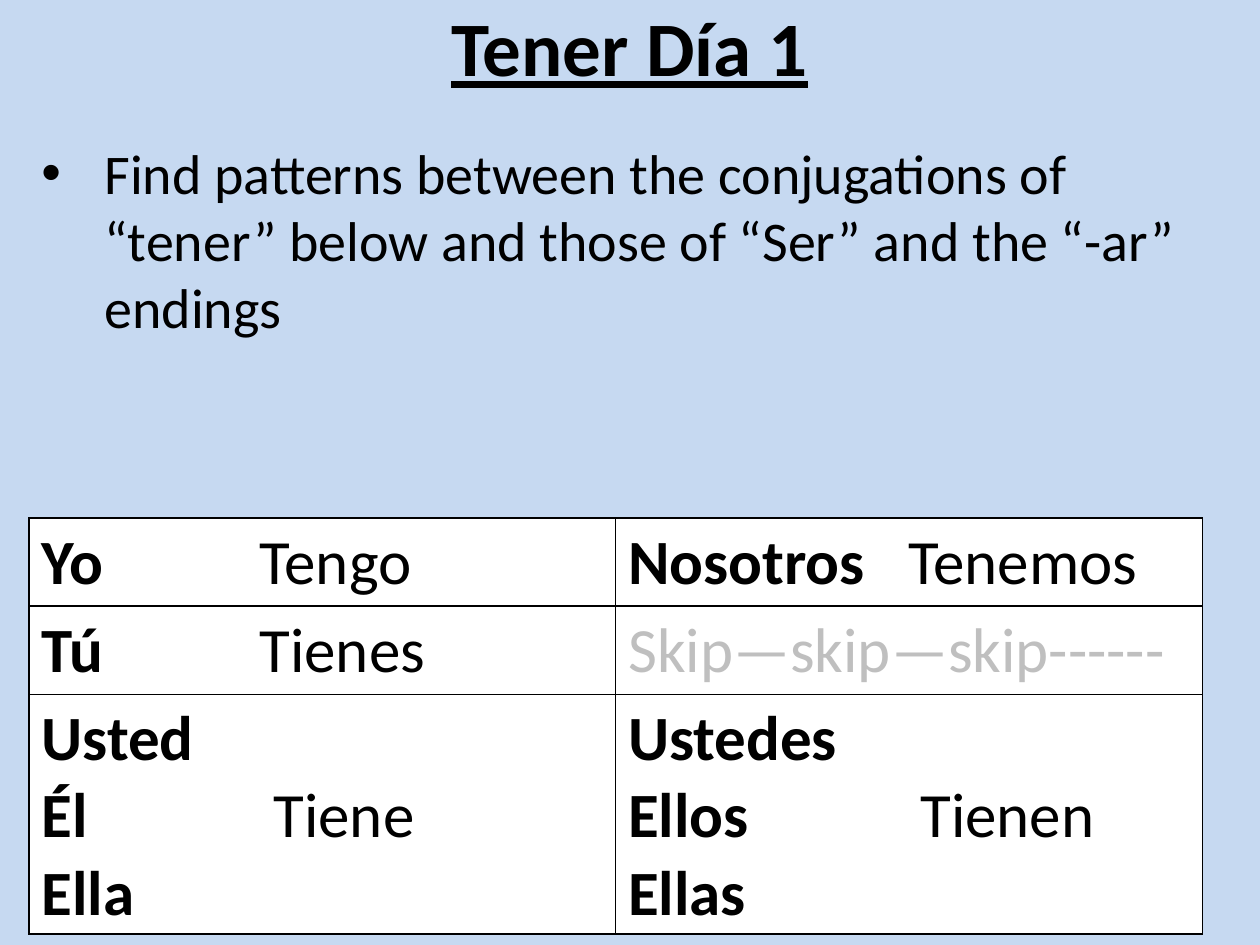
from lxml import etree
from pptx import Presentation
from pptx import util as u
from pptx.dml import color
from pptx.enum import text
from pptx.oxml import ns

FONT = "Calibri"
BLACK, WHITE, GRAY, SKY = "000000", "FFFFFF", "BFBFBF", "C6D9F1"
COLUMN_WIDTH = 335.2
ROW_HEIGHTS = [50.4, 50.4, 136.8]
CONJUGATIONS = [
    [([("Yo", "Tengo")], 124.5), ([("Nosotros", "Tenemos")], 160)],
    [([("Tú", "Tienes")], 124.5), ([("", "Skip—skip—skip------")], 0)],
    [([("Usted", ""), ("Él", "Tiene"), ("Ella", "")], 132.5),
     ([("Ustedes", ""), ("Ellos", "Tienen"), ("Ellas", "")], 167)],
]


def rgb(value):
    return color.RGBColor.from_string(value)


def style(span, size, bold=False, ink=BLACK):
    span.font.name = FONT
    span.font.size = u.Pt(size)
    span.font.bold = bold
    span.font.color.rgb = rgb(ink)


def add_child(parent, tag, **attributes):
    return etree.SubElement(parent, ns.qn(tag), **attributes)


def add_text(page, left, top, width, height, words, size, bold=False):
    box = page.shapes.add_textbox(u.Pt(left), u.Pt(top), u.Pt(width), u.Pt(height))
    box.text_frame.word_wrap = True
    para = box.text_frame.paragraphs[0]
    para.text = words
    style(para.runs[0], size, bold)
    return box


def add_title(page):
    box = add_text(page, 0, -22.3, 720, 97.2, "Tener Día 1", 44, True)
    box.text_frame.vertical_anchor = text.MSO_ANCHOR.MIDDLE
    para = box.text_frame.paragraphs[0]
    para.alignment = text.PP_ALIGN.CENTER
    para.runs[0].font.underline = True


def add_instruction(page):
    words = ("Find patterns between the conjugations of “tener” below "
             "and those of “Ser” and the “-ar” endings")
    box = add_text(page, 16.6, 75.6, 670.4, 123.8, words, 32)
    settings = box.text_frame.paragraphs[0]._p.get_or_add_pPr()
    settings.set("marL", str(u.Pt(36)))
    settings.set("indent", str(u.Pt(-36)))
    add_child(settings, "a:buFont", typeface="Arial")
    add_child(settings, "a:buChar", char="•")


def add_borders(cell):
    settings = cell._tc.get_or_add_tcPr()
    for side in ("a:lnL", "a:lnR", "a:lnT", "a:lnB"):
        line = add_child(settings, side, w=str(u.Pt(1)))
        add_child(add_child(line, "a:solidFill"), "a:srgbClr", val=BLACK)


def write_line(para, pronoun, verb, tab):
    para.text = pronoun
    for span in para.runs:
        style(span, 36, True)
    if verb:
        span = para.add_run()
        span.text = "\t" + verb if pronoun else verb
        style(span, 36, ink=BLACK if pronoun else GRAY)
    if pronoun and verb:
        stops = add_child(para._p.get_or_add_pPr(), "a:tabLst")
        add_child(stops, "a:tab", pos=str(u.Pt(tab)), algn="l")


def fill_cell(cell, lines, tab):
    frame = cell.text_frame
    for index, (pronoun, verb) in enumerate(lines):
        para = frame.add_paragraph() if index else frame.paragraphs[0]
        write_line(para, pronoun, verb, tab)
    add_borders(cell)
    cell.fill.solid()
    cell.fill.fore_color.rgb = rgb(WHITE)


def add_conjugation_table(page):
    frame = page.shapes.add_table(
        len(ROW_HEIGHTS), 2, u.Pt(16.6), u.Pt(296),
        u.Pt(2 * COLUMN_WIDTH), u.Pt(sum(ROW_HEIGHTS)))
    table = frame.table
    table.first_row = table.horz_banding = False
    for column in table.columns:
        column.width = u.Pt(COLUMN_WIDTH)
    for row, height, contents in zip(table.rows, ROW_HEIGHTS, CONJUGATIONS):
        row.height = u.Pt(height)
        for cell, (lines, tab) in zip(row.cells, contents):
            fill_cell(cell, lines, tab)


def main():
    deck = Presentation()
    deck.slide_width, deck.slide_height = u.Pt(720), u.Pt(540)
    page = deck.slides.add_slide(deck.slide_layouts[6])
    page.background.fill.solid()
    page.background.fill.fore_color.rgb = rgb(SKY)
    add_title(page)
    add_conjugation_table(page)
    add_instruction(page)
    deck.save("out.pptx")


if __name__ == "__main__":
    main()
